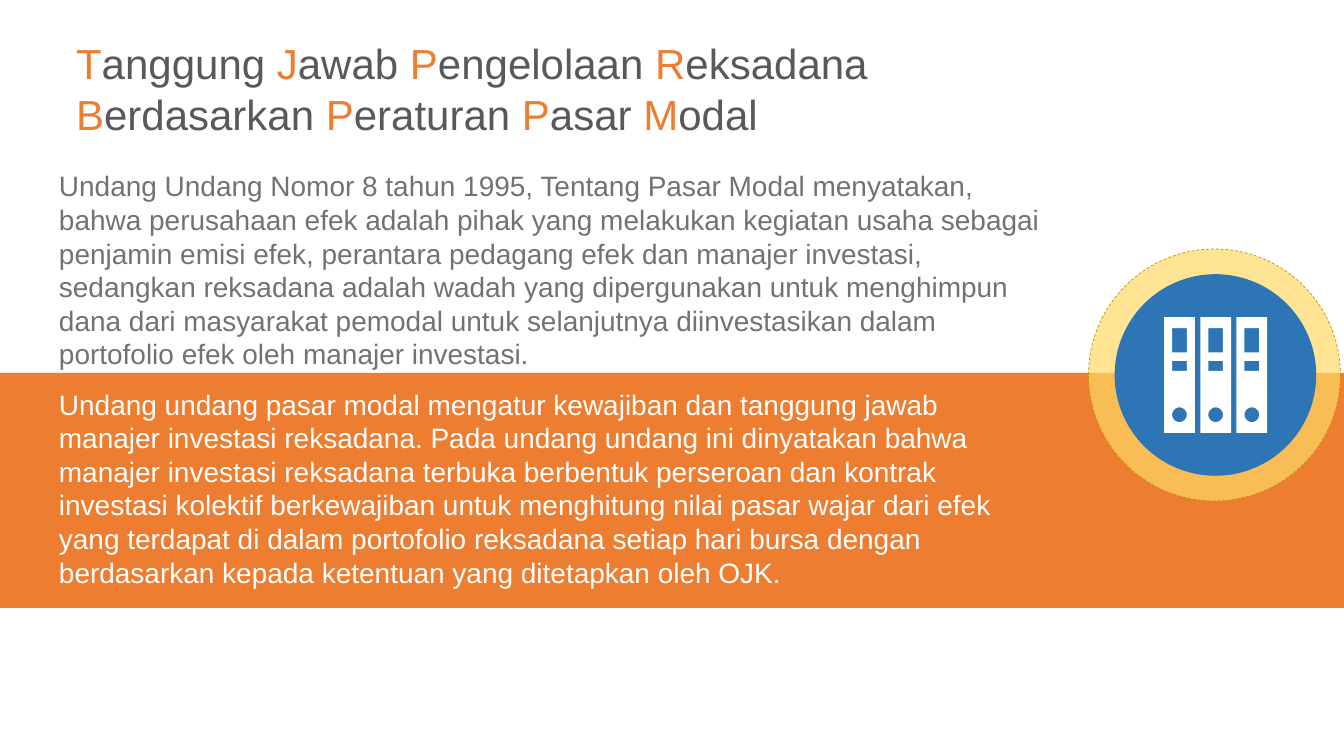
import math
import pptx
import pptx.dml.color
import pptx.enum.dml
import pptx.enum.shapes
import pptx.enum.text
import pptx.oxml.ns
import pptx.util
from lxml import etree

Pt = pptx.util.Pt
Shape = pptx.enum.shapes.MSO_SHAPE

# Content
TITLE = [
    "Tanggung Jawab Pengelolaan Reksadana",
    "Berdasarkan Peraturan Pasar Modal",
]
INTRO = (
    "Undang Undang Nomor 8 tahun 1995, Tentang Pasar Modal menyatakan, bahwa "
    "perusahaan efek adalah pihak yang melakukan kegiatan usaha sebagai penjamin "
    "emisi efek, perantara pedagang efek dan manajer investasi, sedangkan reksadana "
    "adalah wadah yang dipergunakan untuk menghimpun dana dari masyarakat pemodal "
    "untuk selanjutnya diinvestasikan dalam portofolio efek oleh manajer investasi."
)
DUTIES = (
    "Undang undang pasar modal mengatur kewajiban dan tanggung jawab manajer "
    "investasi reksadana. Pada undang undang ini dinyatakan bahwa manajer investasi "
    "reksadana terbuka berbentuk perseroan dan kontrak investasi kolektif "
    "berkewajiban untuk menghitung nilai pasar wajar dari efek yang terdapat di dalam "
    "portofolio reksadana setiap hari bursa dengan berdasarkan kepada ketentuan yang "
    "ditetapkan oleh OJK."
)
COLORS = {
    "orange": "ED7D31", "yellow": "FFD966", "gold": "BF9000", "blue": "2E75B6",
    "white": "FFFFFF", "gray": "767171", "dark": "595959",
}

# Layout, in points
WIDTH, HEIGHT = 1920.24, 1080
BAND = (0, 532.8, WIDTH, 335.5)
RING = (1555.2, 355.7, 360, 360)
DISC = (1592.6, 391.7, 288, 288)
TITLE_BOX = (94.3, 46.8, 1304.6, 159.8)
INTRO_BOX = (69.84, 234, 1428.5, 353.5)
DUTIES_BOX = (69.84, 545.8, 1428.5, 305.3)
BINDER = (1663.2, 452.9, 44, 165.6)
BINDER_COUNT, BINDER_PITCH = 3, 51.7
LABELS = [(11.5, 15.8, 21, 34.8), (11.5, 62.6, 21, 14.4)]
HOLE_X, HOLE_Y, HOLE_RADIUS, HOLE_STEPS = 22, 139.6, 10.5, 40
FRAME = {
    "word_wrap": True,
    "auto_size": pptx.enum.text.MSO_AUTO_SIZE.SHAPE_TO_FIT_TEXT,
    "margin_left": Pt(14.4), "margin_right": Pt(14.4),
    "margin_top": Pt(7.2), "margin_bottom": Pt(7.2),
}


def color(name):
    return pptx.dml.color.RGBColor.from_string(COLORS[name])


def paint(shape, fill):
    shape.shadow.inherit = False
    shape.fill.solid()
    shape.fill.fore_color.rgb = color(fill)
    shape.line.fill.background()


def add_block(page, kind, place, fill):
    shape = page.shapes.add_shape(kind, *map(Pt, place))
    paint(shape, fill)
    return shape


def add_text(page, place, size, paragraphs):
    """Each paragraph is a list of (text, color) spans."""
    frame = page.shapes.add_textbox(*map(Pt, place)).text_frame
    for name, value in FRAME.items():
        setattr(frame, name, value)
    for index, spans in enumerate(paragraphs):
        para = frame.add_paragraph() if index else frame.paragraphs[0]
        for text, tint in spans:
            span = para.add_run()
            span.text = text
            for name, value in {"name": "Arial", "size": Pt(size)}.items():
                setattr(span.font, name, value)
            span.font.color.rgb = color(tint)


def accent_initials(line):
    words = line.split(" ")
    spans = []
    for index, word in enumerate(words):
        gap = " " if index < len(words) - 1 else ""
        spans += [(word[0], "orange"), (word[1:] + gap, "dark")]
    return spans


def rectangle(left, top, width, height):
    right, bottom = left + width, top + height
    return [(left, top), (right, top), (right, bottom), (left, bottom)]


def circle(x, y, radius):
    angles = [2 * math.pi * step / HOLE_STEPS for step in range(HOLE_STEPS)]
    return [(x + radius * math.cos(a), y + radius * math.sin(a)) for a in angles]


def add_binder(page, left):
    top, width, height = BINDER[1:]
    # Cut-outs run against the outer edge
    cutouts = [rectangle(*label) for label in LABELS]
    cutouts.append(circle(HOLE_X, HOLE_Y, HOLE_RADIUS))
    contours = [rectangle(0, 0, width, height)] + [points[::-1] for points in cutouts]
    placed = [[(Pt(left + x), Pt(top + y)) for x, y in points] for points in contours]
    builder = page.shapes.build_freeform(*placed[0][0])
    for index, points in enumerate(placed):
        if index:
            builder.move_to(*points[0])
        builder.add_line_segments(points[1:], close=True)
    paint(builder.convert_to_shape(), "white")


deck = pptx.Presentation()
deck.slide_width, deck.slide_height = Pt(WIDTH), Pt(HEIGHT)
page = deck.slides.add_slide(deck.slide_layouts[6])

# Band and badge
add_block(page, Shape.RECTANGLE, BAND, "orange")
ring = add_block(page, Shape.OVAL, RING, "yellow")
tint = ring.fill._xPr.find(".//" + pptx.oxml.ns.qn("a:srgbClr"))
etree.SubElement(tint, pptx.oxml.ns.qn("a:alpha"), val="70000")
ring.line.color.rgb = color("gold")
ring.line.width = Pt(1)
ring.line.dash_style = pptx.enum.dml.MSO_LINE.DASH
add_block(page, Shape.OVAL, DISC, "blue")

# Binder icon
for number in range(BINDER_COUNT):
    add_binder(page, BINDER[0] + number * BINDER_PITCH)

# Texts
add_text(page, DUTIES_BOX, 40, [[(DUTIES, "white")]])
add_text(page, INTRO_BOX, 40, [[(INTRO, "gray")]])
add_text(page, TITLE_BOX, 60, [accent_initials(line) for line in TITLE])

deck.save("out.pptx")
